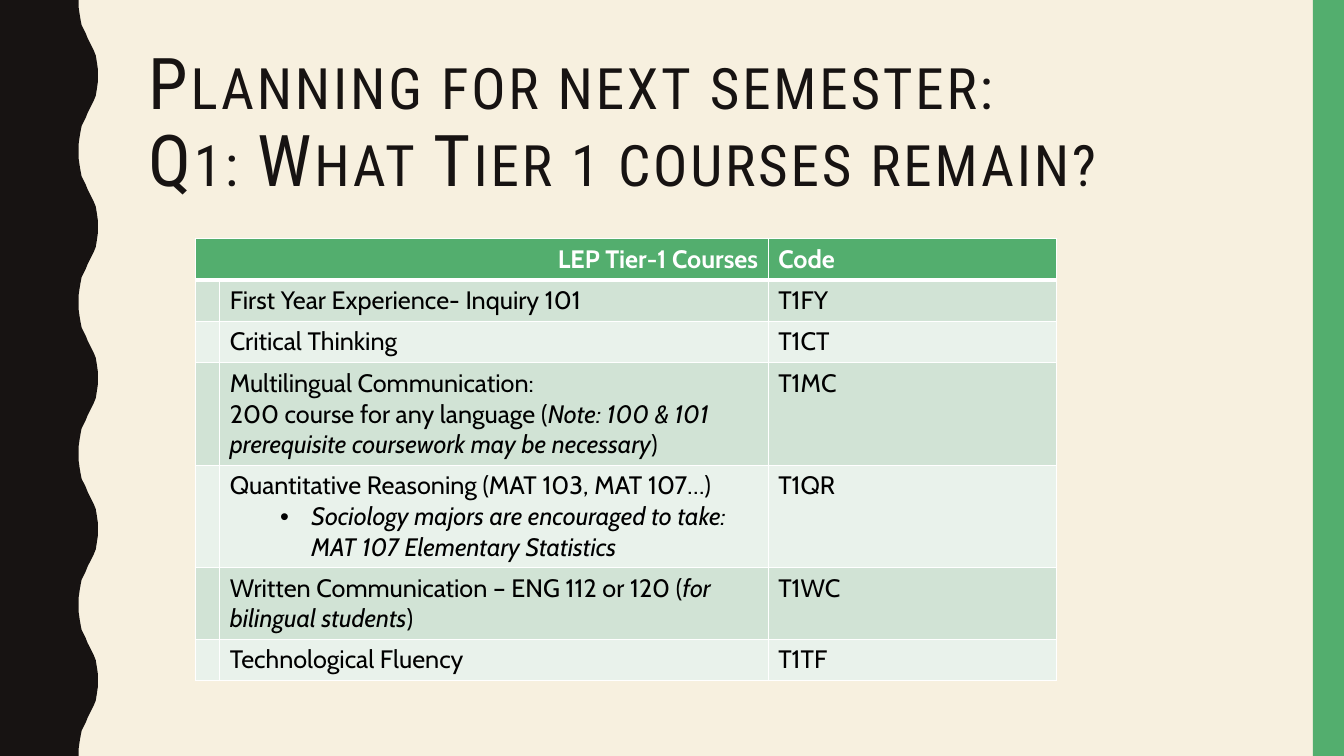
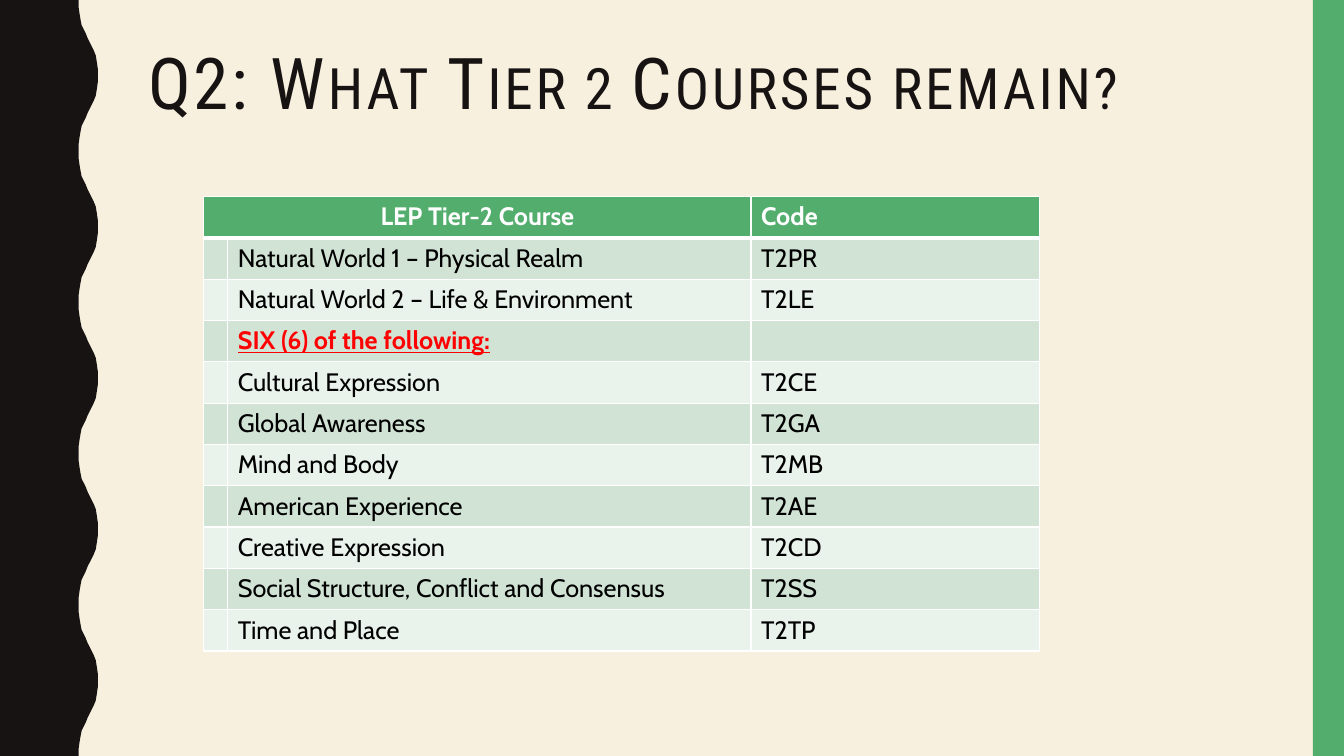
from pptx import Presentation
from pptx import util as u
from pptx.dml.color import RGBColor
from pptx.enum import shapes, text
from pptx.oxml.ns import qn
from lxml import etree

INK, PAPER, GREEN, WHITE = "171312", "F7F0DF", "53AE6E", "FFFFFF"
BLACK, RED = "000000", "FF0000"
BAND_FILLS = ("E9F2EB", "D1E3D5")
TITLE_FONT, BODY_FONT = "Roboto Condensed", "Cabin"
WIDTH, HEIGHT = 13.33, 7.5
ROW = 0.41
HALF_WAVE = [(0.78, 0), (0.78, 0.07), (0.79, 0.14), (0.8, 0.2), (0.81, 0.25),
             (0.83, 0.29), (0.85, 0.33), (0.87, 0.38), (0.89, 0.42), (0.91, 0.46),
             (0.93, 0.5), (0.95, 0.55), (0.96, 0.61), (0.97, 0.68), (0.97, 0.75)]
WAVE_LENGTH = 1.5
WAVE_COUNT = 5


def color(value):
    return RGBColor.from_string(value)


def add_text(paragraph, content, font=BODY_FONT, size=18, fill=BLACK, bold=False,
             italic=False, underline=False, spacing=None, small_caps=False):
    for index, line in enumerate(content.split("\n")):
        if index:
            paragraph.add_line_break()
        run = paragraph.add_run()
        run.text = line
        run.font.name, run.font.size = font, u.Pt(size)
        run.font.bold, run.font.italic, run.font.underline = bold, italic, underline
        run.font.color.rgb = color(fill)
        properties = run.font._element if hasattr(run.font, "_element") else run._r.get_or_add_rPr()
        if spacing:
            properties.set("spc", str(spacing * 100))
        if small_caps:
            properties.set("cap", "small")


class Deck:
    """Holds the shared style, the presentation and the current slide."""

    def __init__(self):
        self.presentation = Presentation()
        self.presentation.slide_width = u.Inches(WIDTH)
        self.presentation.slide_height = u.Inches(HEIGHT)
        background = self.presentation.slide_master.background.fill
        background.solid()
        background.fore_color.rgb = color(PAPER)
        self.slide = None

    def new_slide(self, title_runs):
        self.slide = self.presentation.slides.add_slide(self.presentation.slide_layouts[5])
        self.wave()
        self.bar(13.02, 0, 0.31, HEIGHT)
        self.title(title_runs)

    def paint(self, shape, fill):
        shape.shadow.inherit = False
        shape.fill.solid()
        shape.fill.fore_color.rgb = color(fill)
        shape.line.fill.background()

    def wave(self):
        mirrored = [(x, WAVE_LENGTH - y) for x, y in reversed(HALF_WAVE[:-1])]
        points = [(x, y + number * WAVE_LENGTH)
                  for number in range(WAVE_COUNT) for x, y in HALF_WAVE + mirrored]
        points.append((0, HEIGHT))
        builder = self.slide.shapes.build_freeform(0, 0)
        builder.add_line_segments([(u.Inches(x), u.Inches(y)) for x, y in points])
        self.paint(builder.convert_to_shape(), INK)

    def bar(self, left, top, width, height):
        box = map(u.Inches, (left, top, width, height))
        self.paint(self.slide.shapes.add_shape(shapes.MSO_SHAPE.RECTANGLE, *box), GREEN)

    def title(self, runs):
        title = self.slide.shapes.title
        title.left, title.top, title.width, title.height = map(
            u.Inches, (1.37, 0.42, 11.13, 1.63))
        frame = title.text_frame
        frame.word_wrap = True
        frame.auto_size = text.MSO_AUTO_SIZE.NONE
        frame.vertical_anchor = text.MSO_ANCHOR.TOP
        paragraph = frame.paragraphs[0]
        paragraph.alignment = text.PP_ALIGN.LEFT
        paragraph.line_spacing = 0.9
        for content, style in runs:
            add_text(paragraph, content, font=TITLE_FONT, size=51, fill=INK,
                     spacing=2, **style)

    def borders(self, cell, row):
        properties = cell._tc.get_or_add_tcPr()
        widths = {"lnL": 1, "lnR": 1, "lnT": 3 if row == 1 else 1, "lnB": 3 if row == 0 else 1}
        for side, width in widths.items():
            line = etree.SubElement(properties, qn("a:" + side), w=str(u.Pt(width)))
            fill = etree.SubElement(line, qn("a:solidFill"))
            etree.SubElement(fill, qn("a:srgbClr"), val=WHITE)

    def cell(self, cell, row, content):
        self.borders(cell, row)
        cell.fill.solid()
        cell.fill.fore_color.rgb = color(BAND_FILLS[row % 2] if row else GREEN)
        base = {} if row else {"fill": WHITE, "bold": True}
        paragraphs = [[(content, {})]] if isinstance(content, str) else content
        for index, runs in enumerate(paragraphs):
            frame = cell.text_frame
            paragraph = frame.add_paragraph() if index else frame.paragraphs[0]
            for words, style in runs:
                if words:
                    add_text(paragraph, words, **{**base, **style})

    def table(self, left, top, widths, heading, alignment, courses, heights):
        rows = [(heading, "Code")] + courses
        box = map(u.Inches, (left, top, sum(widths), sum(heights)))
        table = self.slide.shapes.add_table(len(rows), len(widths), *box).table
        table.horz_banding = False
        for column, width in zip(table.columns, widths):
            column.width = u.Inches(width)
        for index, (name, code) in enumerate(rows):
            table.rows[index].height = u.Inches(heights[index])
            contents = ("", name, code) if index else (name, "", code)
            for column, content in enumerate(contents):
                self.cell(table.cell(index, column), index, content)
        table.cell(0, 0).merge(table.cell(0, 1))
        table.cell(0, 0).text_frame.paragraphs[0].alignment = alignment
        return table

    def bullet(self, paragraph):
        paragraph.level = 1
        properties = paragraph._p.get_or_add_pPr()
        properties.set("marL", str(u.Inches(0.81)))
        properties.set("indent", str(-u.Inches(0.31)))
        etree.SubElement(properties, qn("a:buFont"), typeface="Arial")
        etree.SubElement(properties, qn("a:buChar"), char="•")


def main():
    deck = Deck()
    small, italic = {"small_caps": True}, {"italic": True}

    deck.new_slide([("Planning for next semester:\nQ1: What Tier 1 courses remain?", small)])
    tier_one = [
        ("First Year Experience- Inquiry 101", "T1FY"),
        ("Critical Thinking", "T1CT"),
        ([[("Multilingual Communication:", {})],
          [("200 course for any language (", {}),
           ("Note: 100 & 101 prerequisite coursework may be necessary", italic),
           (")", {})]], "T1MC"),
        ([[("Quantitative Reasoning (MAT 103, MAT 107…)", {})],
          [("Sociology majors are encouraged to take: MAT 107 Elementary Statistics",
            italic)]], "T1QR"),
        ([[("Written Communication – ENG 112 or 120 (", {}),
           ("for bilingual students", italic), (")", {})]], "T1WC"),
        ("Technological Fluency", "T1TF"),
    ]
    table = deck.table(1.94, 2.37, (0.23, 5.44, 2.86), "LEP Tier-1 Courses",
                       text.PP_ALIGN.RIGHT, tier_one,
                       (ROW, ROW, ROW, 1.01, 1.01, 0.71, ROW))
    deck.bullet(table.cell(4, 1).text_frame.paragraphs[1])

    deck.new_slide([("Q2: ", {}), ("What Tier 2 Courses remain?", small)])
    tier_two = [
        ("Natural World 1 – Physical Realm", "T2PR"),
        ("Natural World 2 – Life & Environment", "T2LE"),
        ([[("SIX (6) of the following:",
            {"fill": RED, "bold": True, "underline": True})]], ""),
        ("Cultural Expression", "T2CE"),
        ("Global Awareness", "T2GA"),
        ("Mind and Body", "T2MB"),
        ("American Experience", "T2AE"),
        ("Creative Expression", "T2CD"),
        ("Social Structure, Conflict and Consensus", "T2SS"),
        ("Time and Place", "T2TP"),
    ]
    deck.table(2.02, 1.95, (0.23, 5.19, 2.86), "LEP Tier-2 Course",
               text.PP_ALIGN.CENTER, tier_two, [ROW] * (len(tier_two) + 1))

    deck.presentation.save("out.pptx")


if __name__ == "__main__":
    main()
